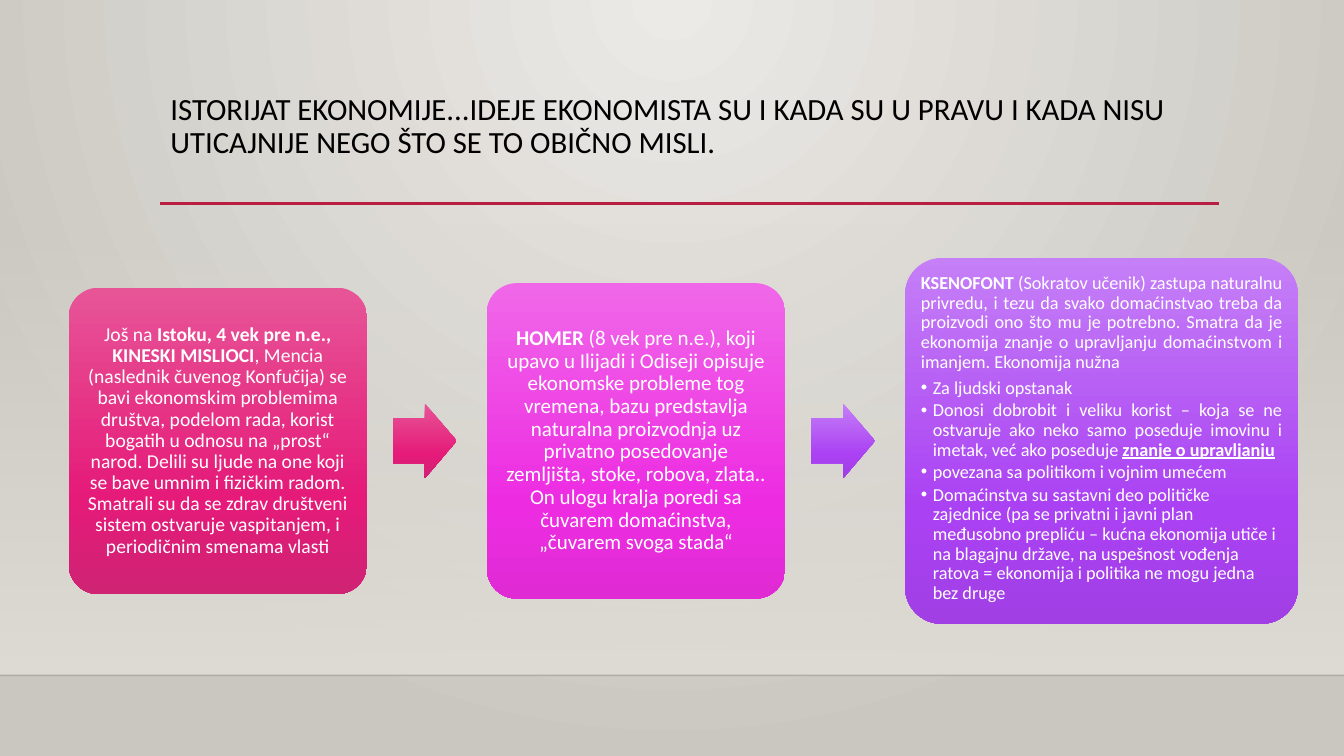
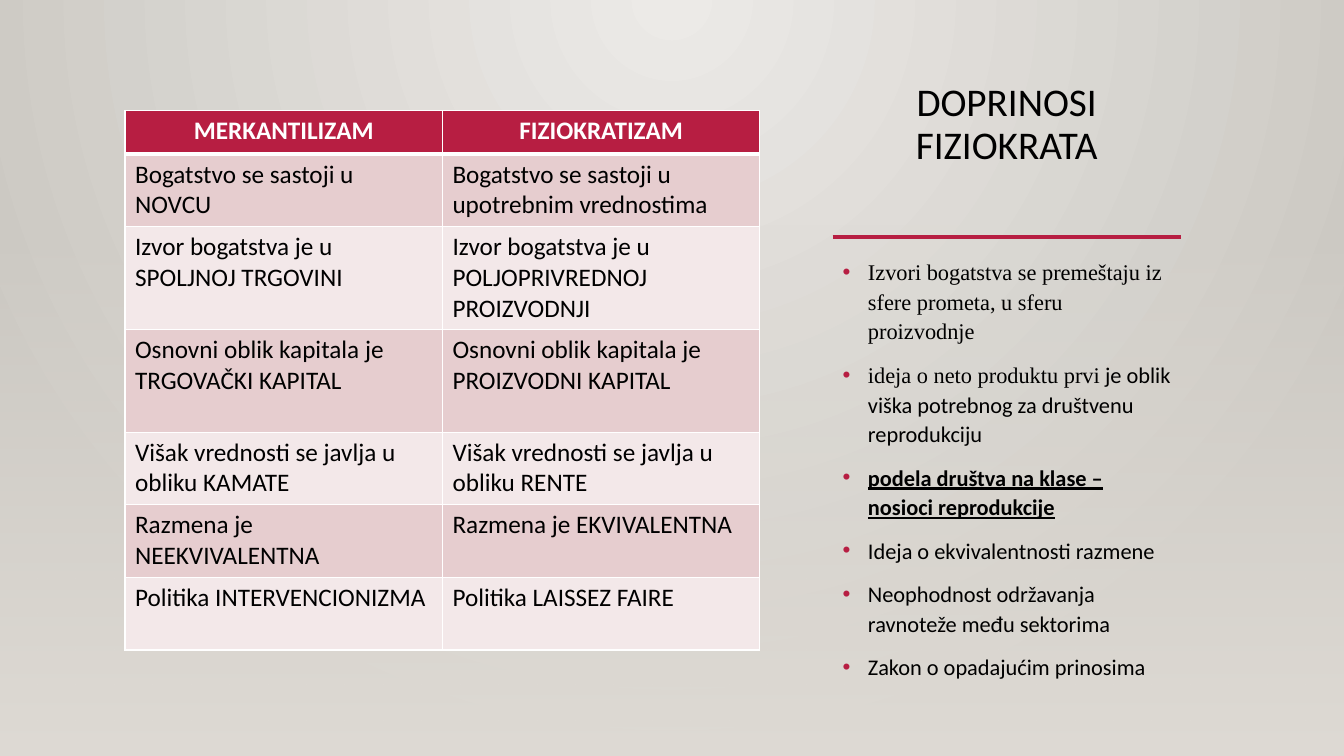
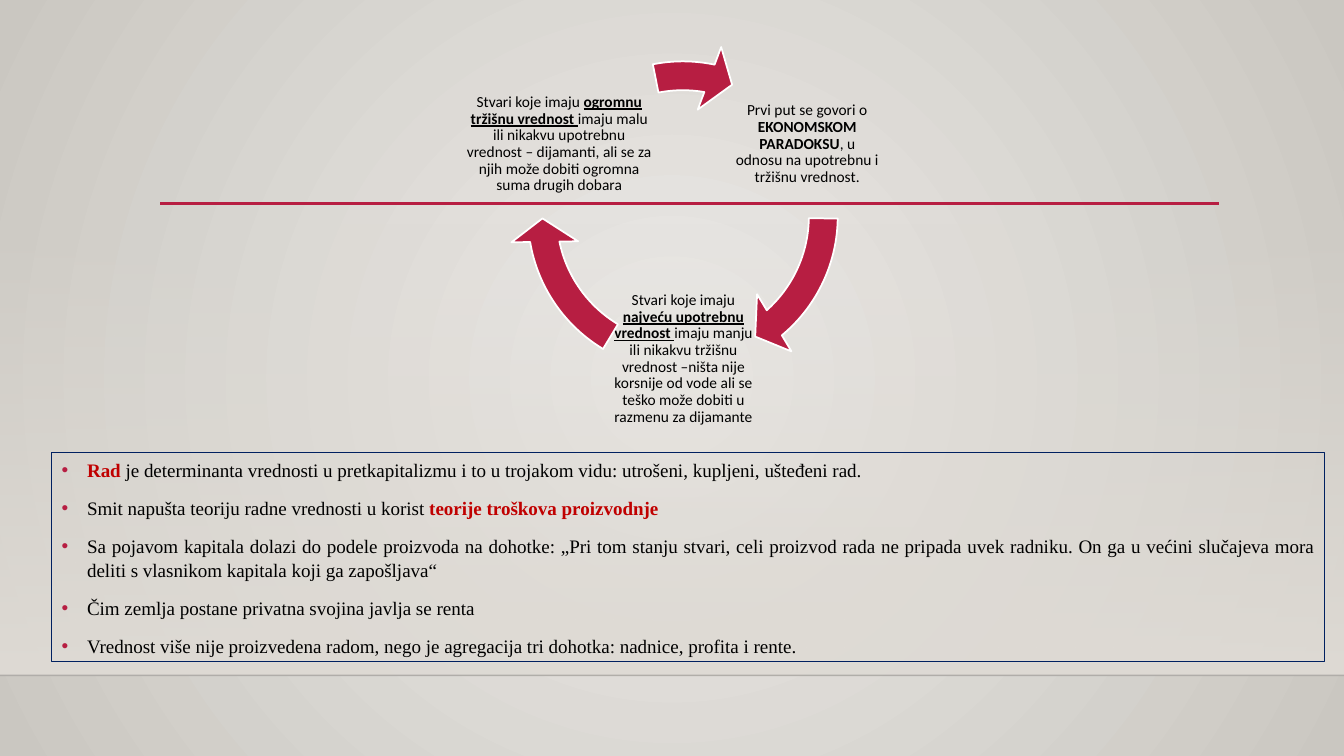
from dataclasses import dataclass
from functools import partial

from lxml import etree
from pptx import Presentation
from pptx import util as u
from pptx.dml.color import RGBColor
from pptx.enum import shapes, text
from pptx.oxml import parse_xml
from pptx.oxml.ns import nsdecls, qn

Cm, Pt = u.Cm, u.Pt
SHAPE, ALIGN, ANCHOR = shapes.MSO_SHAPE, text.PP_ALIGN, text.MSO_ANCHOR

COLOURS = {
    "ink": "000000", "white": "FFFFFF", "crimson": "B71E42", "red": "C00000",
    "navy": "002060", "floor": "000001", "glow": "ECEAE7", "stone": "CAC7C1",
    "sand": "DFDBD5", "rose": "E6CDCF", "blush": "F3E8E9",
}
CARD_GRADIENTS = {
    "pink": ["E75597", "E51A79", "CF2374"],
    "magenta": ["F068E8", "ED2CE2", "E02BD5"],
    "violet": ["C57FF7", "AA41F3", "A13FE5"],
}
WIDTH, HEIGHT = 33.87, 19.05
BAND_TOP, FLOOR = 5.62, 17.02
TOP_CENTRE, MIDDLE = (43, 0, 43, 100), (50, 50, 50, 50)
GLOW = [(0, COLOURS["glow"], 100), (100, COLOURS["stone"], 100)]
FADE = [(0, COLOURS["sand"], 0), (100, COLOURS["sand"], 100)]

STRONG = {"bold": True}
KEY = {"bold": True, "underline": True}
ALERT = {"bold": True, "color": "red"}


@dataclass
class Para:
    """A paragraph; runs are strings or (string, style) pairs, hang in cm makes a bullet."""
    runs: list
    align: object = ALIGN.LEFT
    spacing: float = 0.9
    gap: float = 0
    hang: float = 0
    dot: str = ""


def rgb(name):
    return RGBColor.from_string(COLOURS[name])


def lengths(*values):
    return [Cm(value) for value in values]


def gradient(fill, stops, centre=None):
    """Fill with (position, hex, opacity) stops, downwards or in circles round centre."""
    marks = "".join(
        f'<a:gs pos="{pos * 1000}"><a:srgbClr val="{colour}">'
        f'<a:alpha val="{opacity * 1000}"/></a:srgbClr></a:gs>'
        for pos, colour, opacity in stops)
    direction = '<a:lin ang="5400000" scaled="0"/>'
    if centre:
        sides = " ".join(f'{side}="{value * 1000}"' for side, value in zip("ltrb", centre))
        direction = f'<a:path path="circle"><a:fillToRect {sides}/></a:path>'
    fill.solid()
    fill._xPr.replace(fill._xPr.find(qn("a:solidFill")), parse_xml(
        f'<a:gradFill {nsdecls("a")} rotWithShape="1"><a:gsLst>{marks}</a:gsLst>'
        f'{direction}</a:gradFill>'))


def add_bullet(paragraph, hang, dot):
    props = paragraph._p.get_or_add_pPr()
    props.set("marL", str(Cm(hang)))
    props.set("indent", str(-Cm(hang)))
    if dot:
        tint = etree.SubElement(props, qn("a:buClr"))
        etree.SubElement(tint, qn("a:srgbClr"), val=COLOURS[dot])
    etree.SubElement(props, qn("a:buFont"), typeface="Arial")
    etree.SubElement(props, qn("a:buChar"), char="•")


def write(frame, paras, size, colour="ink", font="Calibri", anchor=ANCHOR.TOP, margins=None):
    settings = {"word_wrap": True, "auto_size": text.MSO_AUTO_SIZE.NONE,
                "vertical_anchor": anchor}
    if margins is not None:
        settings.update({f"margin_{side}": Cm(margins)
                         for side in ("left", "top", "right", "bottom")})
    for name, value in settings.items():
        setattr(frame, name, value)
    for index, para in enumerate(paras):
        paragraph = frame.add_paragraph() if index else frame.paragraphs[0]
        if para.hang:
            add_bullet(paragraph, para.hang, para.dot)
        layout = {"alignment": para.align, "line_spacing": para.spacing,
                  "space_before": Pt(para.gap if index else 0), "space_after": Pt(0)}
        for name, value in layout.items():
            setattr(paragraph, name, value)
        for part in para.runs:
            words, style = (part, {}) if isinstance(part, str) else part
            run = paragraph.add_run()
            run.text = words
            style = {"name": font, "size": Pt(size), "color": colour, **style}
            run.font.color.rgb = rgb(style.pop("color"))
            for name, value in style.items():
                setattr(run.font, name, value)


def add_plain(slide, kind, box, adjustments=()):
    """Add a shape without shadow or outline."""
    shape = slide.shapes.add_shape(kind, *lengths(*box))
    shape.shadow.inherit = False
    shape.line.fill.background()
    for index, value in enumerate(adjustments):
        shape.adjustments[index] = value
    return shape


def add_rule(slide, left, right, y, colour="crimson", width=2.5, opacity=100):
    rule = slide.shapes.add_connector(shapes.MSO_CONNECTOR.STRAIGHT,
                                      *lengths(left, y, right, y))
    rule.line.color.rgb = rgb(colour)
    rule.line.width = Pt(width)
    tint = rule._element.spPr.find(".//" + qn("a:srgbClr"))
    etree.SubElement(tint, qn("a:alpha"), val=str(opacity * 1000))
    etree.SubElement(rule._element.spPr, qn("a:effectLst"))
    return rule


def add_band(slide, bottom):
    band = add_plain(slide, SHAPE.RECTANGLE, (0, BAND_TOP, WIDTH, bottom - BAND_TOP))
    gradient(band.fill, FADE)
    return band


def move_to_back(tree, parts):
    for offset, part in enumerate(parts):
        tree.insert(2 + offset, part._element)


def dress_master(master, slide):
    """Draw the shared decoration on the slide, then hand it to the master."""
    gradient(master.background.fill, GLOW, TOP_CENTRE)
    parts = [add_band(slide, FLOOR),
             add_rule(slide, 0, WIDTH, FLOOR, "floor", 1, 20),
             add_rule(slide, 4.04, 30.73, 5.13)]
    for number, part in enumerate(parts, 20):
        part._element.xpath(".//p:cNvPr")[0].set("id", str(number))
    move_to_back(master.shapes._spTree, parts)


def place(holder, box):
    for name, value in zip(("left", "top", "width", "height"), lengths(*box)):
        setattr(holder, name, value)
    return holder


def set_title(slide, box, words, size, align=ALIGN.LEFT):
    title = place(slide.shapes.title, box)
    write(title.text_frame, [Para([words], align)], size)


def add_cards(slide, left, middle, cards):
    """Lay cards in a row round the middle height, an arrow before each but the first."""
    arrow_width, arrow_height, gap = 1.6, 1.88, 3.02
    for index, (width, height, tone, size, margins, anchor, paras) in enumerate(cards):
        stops = [(pos, colour, 100)
                 for pos, colour in zip((0, 69, 100), CARD_GRADIENTS[tone])]
        if index:
            arrow = add_plain(slide, SHAPE.RIGHT_ARROW,
                              (left - gap + 0.66, middle - arrow_height / 2,
                               arrow_width, arrow_height), (0.6, 0.5))
            # the first arrow keeps the tone of the card it leaves
            gradient(arrow.fill, first_stops if index == 1 else stops)
        else:
            first_stops = stops
        card = add_plain(slide, SHAPE.ROUNDED_RECTANGLE,
                         (left, middle - height / 2, width, height), (0.1,))
        gradient(card.fill, stops)
        write(card.text_frame, paras, size, "white", anchor=anchor, margins=margins)
        left += width + gap


def add_border(cell, sides):
    """Draw white borders, given as {side: points}."""
    props = cell._tc.get_or_add_tcPr()
    for index, (side, points) in enumerate(sides.items()):
        props.insert(index, parse_xml(
            f'<a:ln{side} {nsdecls("a")} w="{Pt(points)}"><a:solidFill>'
            f'<a:srgbClr val="{COLOURS["white"]}"/></a:solidFill></a:ln{side}>'))


def add_comparison(slide, left, top, column, heights, rows):
    table = slide.shapes.add_table(len(rows), 2, *lengths(
        left, top, 2 * column, sum(heights))).table
    for part in table.columns:
        part.width = Cm(column)
    for index, (height, words) in enumerate(zip(heights, rows)):
        table.rows[index].height = Cm(height)
        head = index == 0
        for cell, phrase in zip(table.rows[index].cells, words):
            cell.fill.solid()
            cell.fill.fore_color.rgb = rgb("crimson" if head else ("blush", "rose")[index % 2])
            add_border(cell, {"L": 1, "R": 1, "T": 3 if index == 1 else 1,
                              "B": 3 if head else 1})
            paragraph = cell.text_frame.paragraphs[0]
            paragraph.alignment = ALIGN.CENTER if head else ALIGN.LEFT
            run = paragraph.add_run()
            run.text = phrase
            run.font.color.rgb = rgb("white" if head else "ink")
            for name, value in {"name": "Calibri", "size": Pt(18), "bold": head}.items():
                setattr(run.font, name, value)


def add_cycle(slide, left, top, size, stages):
    """Set each text at its offset in the ring and draw the arrow that leaves it."""
    for (x, y, width), (end, start), runs in stages:
        stage = slide.shapes.add_textbox(*lengths(left + x, top + y, width, 3.71))
        write(stage.text_frame, [Para(runs, ALIGN.CENTER)], 11,
              anchor=ANCHOR.MIDDLE, margins=0.05)
        arrow = add_plain(slide, SHAPE.CIRCULAR_ARROW, (left, top, size, size),
                          (0.083, 5.764, end, start, 0.096))
        arrow.fill.solid()
        arrow.fill.fore_color.rgb = rgb("crimson")
        arrow.line.color.rgb = rgb("white")
        arrow.line.width = Pt(1.25)


def history_slide(slide):
    set_title(slide, (4.04, 2.23, 26.67, 2.92),
              "ISTORIJAT EKONOMIJE...IDEJE EKONOMISTA SU I KADA SU U PRAVU I KADA NISU "
              "UTICAJNIJE NEGO ŠTO SE TO OBIČNO MISLI.", 22)
    point = partial(Para, gap=2, hang=0.3)
    china = [Para([
        "Još na ", ("Istoku, 4 vek pre n.e., KINESKI MISLIOCI", STRONG),
        ", Mencia (naslednik čuvenog Konfučija) se bavi ekonomskim problemima društva, "
        "podelom rada, korist bogatih u odnosu na „prost“ narod. Delili su ljude na one "
        "koji se bave umnim i fizičkim radom. Smatrali su da se zdrav društveni sistem "
        "ostvaruje vaspitanjem, i periodičnim smenama vlasti"], ALIGN.CENTER)]
    homer = [Para([
        ("HOMER", STRONG),
        " (8 vek pre n.e.), koji upavo u Ilijadi i Odiseji opisuje ekonomske probleme tog "
        "vremena, bazu predstavlja naturalna proizvodnja uz privatno posedovanje "
        "zemljišta, stoke, robova, zlata.. On ulogu kralja poredi sa čuvarem "
        "domaćinstva, „čuvarem svoga stada“"], ALIGN.CENTER)]
    xenophon = [
        Para([("KSENOFONT ", STRONG),
              "(Sokratov učenik) zastupa naturalnu privredu, i tezu da svako domaćinstvao "
              "treba da proizvodi ono što mu je potrebno. Smatra da je ekonomija znanje o "
              "upravljanju domaćinstvom i imanjem. Ekonomija nužna"], ALIGN.JUSTIFY),
        point(["Za ljudski opstanak"], gap=4.5),
        point(["Donosi dobrobit i veliku korist – koja se ne ostvaruje ako neko samo "
               "poseduje imovinu i imetak, već ako poseduje ",
               ("znanje o upravljanju", KEY)], ALIGN.JUSTIFY),
        point(["povezana sa politikom i vojnim umećem"]),
        point(["Domaćinstva su sastavni deo političke zajednice (pa se privatni i javni "
               "plan međusobno prepliću – kućna ekonomija utiče i na blagajnu države, na "
               "uspešnost vođenja ratova = ekonomija i politika ne mogu jedna bez druge"]),
    ]
    add_cards(slide, 1.73, 11.11, [
        (7.52, 7.72, "pink", 14, 0.15, ANCHOR.MIDDLE, china),
        (7.52, 7.95, "magenta", 15, 0.15, ANCHOR.MIDDLE, homer),
        (9.9, 9.22, "violet", 13, 0.13, ANCHOR.TOP, xenophon),
    ])


def physiocrats_slide(slide):
    cover = add_plain(slide, SHAPE.RECTANGLE, (0, 0, WIDTH, HEIGHT))
    gradient(cover.fill, GLOW, TOP_CENTRE)
    move_to_back(slide.shapes._spTree, [cover, add_band(slide, HEIGHT)])

    left, width = 20.98, 8.78
    set_title(slide, (left, 1.96, width, 2.41), "DOPRINOSI FIZIOKRATA", 28, ALIGN.CENTER)
    add_rule(slide, left, left + width, 5.97)
    point = partial(Para, spacing=1.1, gap=10, hang=0.64, dot="crimson")
    serif = {"name": "Times New Roman"}
    merits = place(slide.placeholders[1], (left, 6.32, width, 10.95))
    write(merits.text_frame, [
        point([("Izvori bogatstva se premeštaju iz sfere prometa, u sferu proizvodnje",
                serif)]),
        point([("ideja o neto produktu prvi", serif),
               " je oblik viška potrebnog za društvenu reprodukciju"]),
        point([("podela društva na klase – nosioci reprodukcije", KEY)]),
        point(["Ideja o ekvivalentnosti razmene"]),
        point(["Neophodnost održavanja ravnoteže među sektorima"]),
        point(["Zakon o opadajućim prinosima"]),
    ], 16)
    add_comparison(slide, 3.15, 2.79, 8, (1.09, 1.83, 2.59, 2.59, 1.83, 1.83, 1.83), [
        ("MERKANTILIZAM", "FIZIOKRATIZAM"),
        ("Bogatstvo se sastoji u NOVCU", "Bogatstvo se sastoji u upotrebnim vrednostima"),
        ("Izvor bogatstva je u SPOLJNOJ TRGOVINI",
         "Izvor bogatstva je u POLJOPRIVREDNOJ PROIZVODNJI"),
        ("Osnovni oblik kapitala je TRGOVAČKI KAPITAL",
         "Osnovni oblik kapitala je PROIZVODNI KAPITAL"),
        ("Višak vrednosti se javlja u obliku KAMATE",
         "Višak vrednosti se javlja u obliku RENTE"),
        ("Razmena je NEEKVIVALENTNA", "Razmena je EKVIVALENTNA"),
        ("Politika INTERVENCIONIZMA", "Politika LAISSEZ FAIRE"),
    ])


def paradox_slide(slide):
    gradient(slide.background.fill, GLOW, MIDDLE)
    title = slide.shapes.title._element
    title.getparent().remove(title)
    add_cycle(slide, 12.83, 1.07, 8.76, [
        ((5.66, 0.71, 3.71), (29.624, 0.527),
         ["Prvi put se govori o ", ("EKONOMSKOM PARADOKSU", STRONG),
          ", u odnosu na upotrebnu i tržišnu vrednost."]),
        ((2.54, 6.12, 3.71), (101.708, 72.612),
         ["Stvari koje imaju ", ("najveću upotrebnu vrednost ", KEY),
          "imaju manju ili nikakvu tržišnu vrednost –ništa nije korsnije od vode ali se "
          "teško može dobiti u razmenu za dijamante"]),
        ((-1.15, 0.71, 4.83), (168.553, 155.297),
         ["Stvari koje imaju ", ("ogromnu tržišnu vrednost ", KEY),
          "imaju malu ili nikakvu upotrebnu vrednost – dijamanti, ali se za njih može "
          "dobiti ogromna suma drugih dobara"]),
    ])
    point = partial(Para, align=ALIGN.JUSTIFY, spacing=1.05, gap=10, hang=0.64,
                    dot="crimson")
    labour = place(slide.placeholders[1], (1.3, 11.4, 32.08, 5.26))
    labour.line.color.rgb = rgb("navy")
    labour.line.width = Pt(0.75)
    write(labour.text_frame, [
        point([("Rad", ALERT), " je determinanta vrednosti u pretkapitalizmu i to u "
               "trojakom vidu: utrošeni, kupljeni, ušteđeni rad."]),
        point(["Smit napušta teoriju radne vrednosti u korist ",
               ("teorije troškova proizvodnje", ALERT)]),
        point(["Sa pojavom kapitala dolazi do podele proizvoda na dohotke: „Pri tom stanju "
               "stvari, celi proizvod rada ne pripada uvek radniku. On ga u većini "
               "slučajeva mora deliti s vlasnikom kapitala koji ga zapošljava“"]),
        point(["Čim zemlja postane privatna svojina javlja se renta"]),
        point(["Vrednost više nije proizvedena radom, nego je agregacija tri dohotka: "
               "nadnice, profita i rente."]),
    ], 13.6, font="Times New Roman")


def main():
    deck = Presentation()
    deck.slide_width, deck.slide_height = lengths(WIDTH, HEIGHT)
    title_only, title_and_body = deck.slide_layouts[5], deck.slide_layouts[1]
    history = deck.slides.add_slide(title_only)
    dress_master(deck.slide_master, history)
    history_slide(history)
    physiocrats_slide(deck.slides.add_slide(title_and_body))
    paradox_slide(deck.slides.add_slide(title_and_body))
    deck.save("out.pptx")


if __name__ == "__main__":
    main()
